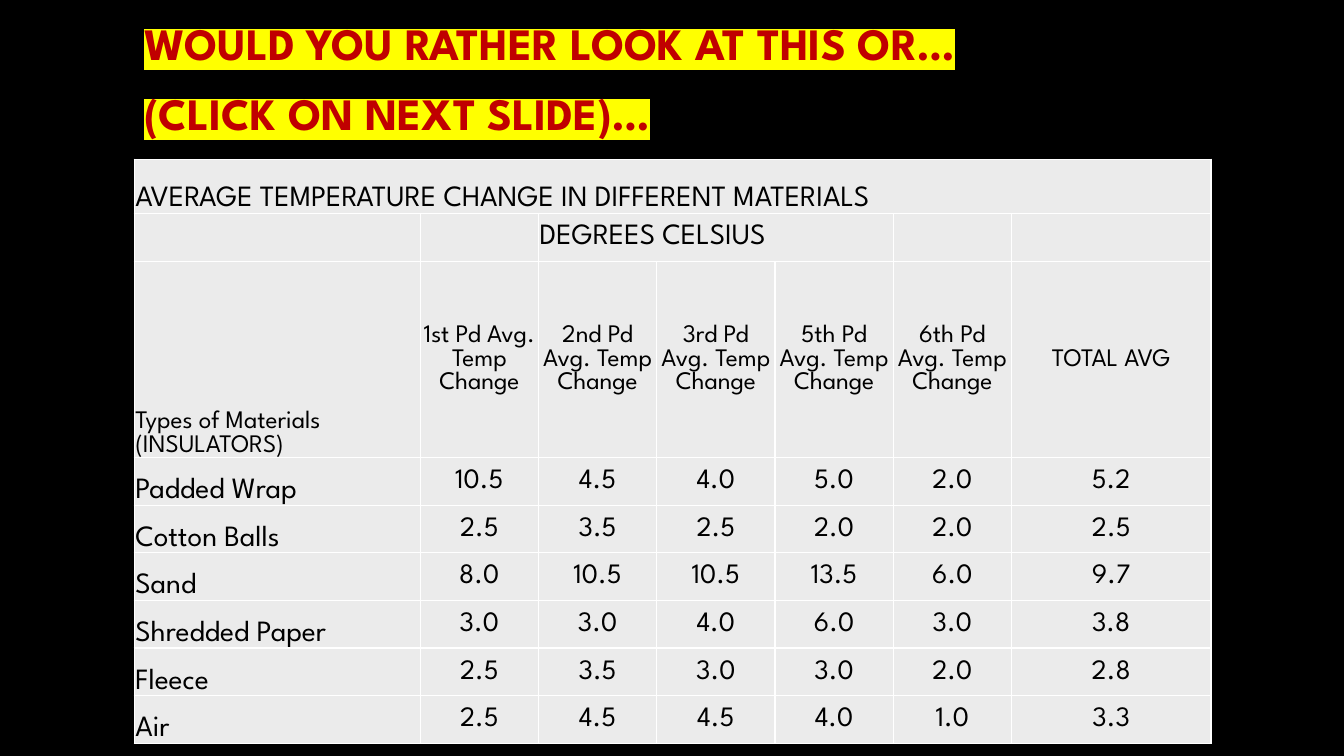
from lxml import etree
from pptx import Presentation
from pptx.dml.color import RGBColor
from pptx.enum import text
from pptx.oxml import ns
from pptx.util import Cm, Pt

FONT = "League Spartan"
COLORS = {"page": "000000", "title": "C00000", "highlight": "FFFF00",
          "cell": "EBEBEB", "border": "FFFFFF", "ink": "000000"}
TITLE = "WOULD YOU RATHER LOOK AT THIS OR…\v(CLICK ON NEXT SLIDE)…"
PERIODS = ["1st", "2nd", "3rd", "5th", "6th"]
HEADINGS = (["Types of Materials (INSULATORS)"]
            + [f"{period} Pd Avg. Temp Change" for period in PERIODS]
            + ["TOTAL AVG"])
READINGS = [
    ["Padded Wrap", 10.5, 4.5, 4.0, 5.0, 2.0, 5.2],
    ["Cotton Balls", 2.5, 3.5, 2.5, 2.0, 2.0, 2.5],
    ["Sand", 8.0, 10.5, 10.5, 13.5, 6.0, 9.7],
    ["Shredded Paper", 3.0, 3.0, 4.0, 6.0, 3.0, 3.8],
    ["Fleece", 2.5, 3.5, 3.0, 3.0, 2.0, 2.8],
    ["Air", 2.5, 4.5, 4.5, 4.0, 1.0, 3.3],
]
COLUMN_WIDTHS = [7.21] + [2.98] * len(PERIODS) + [5.03]
ROW_HEIGHTS = [1.37, 1.2, 4.95] + [1.2] * len(READINGS)


def style_span(span, size, color, bold=False):
    span.font.name = FONT
    span.font.size = Pt(size)
    span.font.bold = bold
    span.font.color.rgb = RGBColor.from_string(COLORS[color])


def highlight_span(span, color):
    mark = etree.Element(ns.qn("a:highlight"))
    etree.SubElement(mark, ns.qn("a:srgbClr"), val=COLORS[color])
    span.font.fill._xPr.find(ns.qn("a:solidFill")).addnext(mark)


def add_title(page):
    box = page.shapes.title
    box.left, box.top, box.width, box.height = Cm(3.38), Cm(-0.89), Cm(27.51), Cm(5.28)
    frame = box.text_frame
    frame.text = TITLE
    frame.word_wrap = True
    frame.auto_size = text.MSO_AUTO_SIZE.NONE
    frame.vertical_anchor = text.MSO_ANCHOR.MIDDLE
    para = frame.paragraphs[0]
    para.alignment = text.PP_ALIGN.LEFT
    para.line_spacing = 1.3
    para.space_before = Pt(0)
    for span in para.runs:
        style_span(span, 32, "title", bold=True)
        highlight_span(span, "highlight")


def format_cell(cell):
    cell.margin_left = cell.margin_right = cell.margin_top = Cm(0.03)
    cell.margin_bottom = 0
    cell.fill.solid()
    cell.fill.fore_color.rgb = RGBColor.from_string(COLORS["cell"])
    properties = cell._tc.get_or_add_tcPr()
    for index, side in enumerate(["lnL", "lnR", "lnT", "lnB"]):
        line = etree.Element(ns.qn(f"a:{side}"), w=str(Pt(1)))
        paint = etree.SubElement(line, ns.qn("a:solidFill"))
        etree.SubElement(paint, ns.qn("a:srgbClr"), val=COLORS["border"])
        properties.insert(index, line)


def write_cell(cell, words, size, anchor, align=text.PP_ALIGN.LEFT):
    cell.text = words
    cell.vertical_anchor = anchor
    para = cell.text_frame.paragraphs[0]
    para.alignment = align
    style_span(para.runs[0], size, "ink")


def write_row(table, row, values, label_size, value_size):
    write_cell(table.cell(row, 0), values[0], label_size, text.MSO_ANCHOR.BOTTOM)
    for column, value in enumerate(values[1:], 1):
        write_cell(table.cell(row, column), str(value), value_size,
                   text.MSO_ANCHOR.MIDDLE, text.PP_ALIGN.CENTER)


def add_temperature_table(page):
    table = page.shapes.add_table(
        len(ROW_HEIGHTS), len(COLUMN_WIDTHS), Cm(3.38), Cm(4.01),
        Cm(sum(COLUMN_WIDTHS)), Cm(sum(ROW_HEIGHTS))).table
    table.first_row = table.horz_banding = False
    for column, width in zip(table.columns, COLUMN_WIDTHS):
        column.width = Cm(width)
    for row, height in zip(table.rows, ROW_HEIGHTS):
        row.height = Cm(height)
    for cell in table.iter_cells():
        format_cell(cell)

    # Caption and unit
    table.cell(0, 0).merge(table.cell(0, 6))
    write_cell(table.cell(0, 0), "AVERAGE TEMPERATURE CHANGE IN DIFFERENT MATERIALS",
               21, text.MSO_ANCHOR.BOTTOM)
    table.cell(1, 2).merge(table.cell(1, 4))
    write_cell(table.cell(1, 2), "DEGREES CELSIUS", 21, text.MSO_ANCHOR.MIDDLE)

    # Headings and readings
    write_row(table, 2, HEADINGS, 18, 18)
    for row, values in enumerate(READINGS, 3):
        write_row(table, row, values, 21, 20)


def main():
    deck = Presentation()
    deck.slide_width, deck.slide_height = Cm(33.87), Cm(19.05)
    page = deck.slides.add_slide(deck.slide_layouts.get_by_name("Title Only"))
    page.background.fill.solid()
    page.background.fill.fore_color.rgb = RGBColor.from_string(COLORS["page"])
    add_temperature_table(page)
    add_title(page)
    deck.save("out.pptx")


if __name__ == "__main__":
    main()
